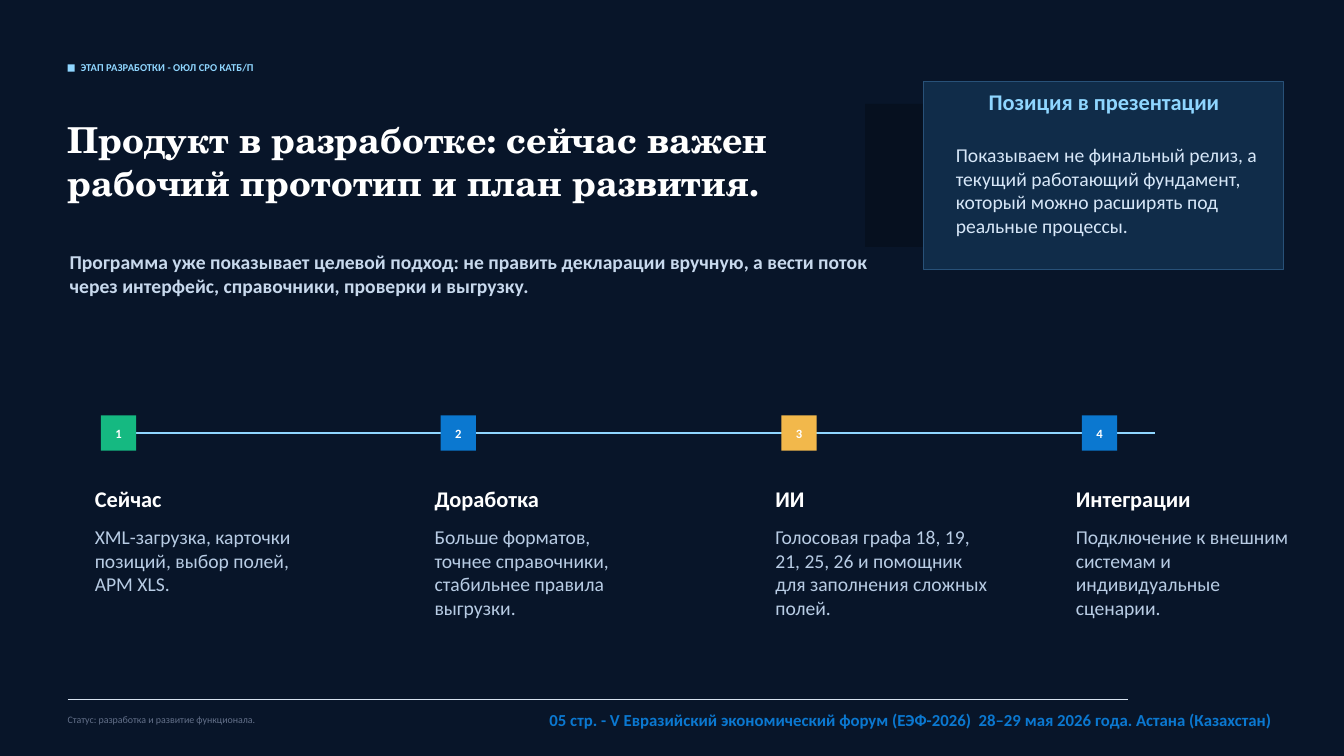
from pptx import Presentation
from pptx.dml.color import RGBColor
from pptx.enum.shapes import MSO_CONNECTOR as CONN, MSO_SHAPE as SHAPE
from pptx.enum.text import MSO_ANCHOR as ANCHOR, PP_ALIGN as ALIGN
from pptx.oxml.ns import qn
from pptx.util import Inches, Pt
from lxml import etree

SKY, BLUE, WHITE, MUTED = "8FD6FF", "0B78D0", "FFFFFF", "B8CCE4"
rgb = RGBColor.from_string

prs = Presentation()
prs.slide_width, prs.slide_height = Inches(13.33), Inches(7.5)
s = prs.slides.add_slide(prs.slide_layouts[6])
s.background.fill.solid()
s.background.fill.fore_color.rgb = rgb("081529")


def add_box(x, y, w, h, fill):
    sp = s.shapes.add_shape(SHAPE.RECTANGLE, Inches(x), Inches(y), Inches(w), Inches(h))
    sp.shadow.inherit = False
    sp.fill.solid()
    sp.fill.fore_color.rgb = rgb(fill)
    sp.line.fill.background()
    return sp


def add_text(text, x, y, w, h, size, color, bold=False, align=ALIGN.LEFT,
             font="Calibri", sp=None):
    """Write into the given shape, or into a new text box."""
    if sp is None:
        sp = s.shapes.add_textbox(Inches(x), Inches(y), Inches(w), Inches(h))
    tf = sp.text_frame
    tf.word_wrap = True
    tf.margin_left = tf.margin_top = tf.margin_right = tf.margin_bottom = 0
    tf.text = text
    p = tf.paragraphs[0]
    p.alignment = align
    r = p.runs[0]
    r.font.name, r.font.size, r.font.bold = font, Pt(size), bold
    r.font.color.rgb = rgb(color)


# Heading
add_box(0.67, 0.64, 0.07, 0.07, SKY)
add_text("ЭТАП РАЗРАБОТКИ - ОЮЛ СРО КАТБ/П", 0.8, 0.61, 3.75, 0.19, 7.5, SKY, True)
add_text("Продукт в разработке: сейчас важен рабочий прототип и план развития.",
         0.67, 1.17, 7.92, 1.08, 25.5, WHITE, True, font="TeX Gyre Schola")
add_text("Программа уже показывает целевой подход: не править декларации вручную, "
         "а вести поток через интерфейс, справочники, проверки и выгрузку.",
         0.69, 2.48, 7.92, 0.56, 14, "C8D9ED", True)

# Timeline axis and footer rule
for x1, x2, y, width, color in [(1.25, 11.46, 4.3, 1.5, SKY),
                                (0.67, 11.19, 6.94, 0.75, "D7E2EF")]:
    line = s.shapes.add_connector(CONN.STRAIGHT, Inches(x1), Inches(y), Inches(x2), Inches(y))
    line.line.width = Pt(width)
    line.line.color.rgb = rgb(color)
    etree.SubElement(line._element.spPr, qn("a:effectLst"))

# Timeline stages
stages = [
    (0.94, "15B981", "Сейчас", "XML-загрузка, карточки позиций, выбор полей, АРМ XLS."),
    (4.31, BLUE, "Доработка",
     "Больше форматов, точнее справочники, стабильнее правила выгрузки."),
    (7.69, "F2B84B", "ИИ",
     "Голосовая графа 18, 19, 21, 25, 26 и помощник для заполнения сложных полей."),
    (10.67, BLUE, "Интеграции",
     "Подключение к внешним системам и индивидуальные сценарии."),
]
for number, (x, color, name, details) in enumerate(stages, 1):
    marker = add_box(x + 0.06, 4.12, 0.35, 0.35, color)
    marker.text_frame.vertical_anchor = ANCHOR.MIDDLE
    add_text(str(number), 0, 0, 0, 0, 9, WHITE, True, ALIGN.CENTER, sp=marker)
    add_text(name, x, 4.81, 1.88, 0.25, 16, WHITE, True)
    add_text(details, x, 5.21, 2.14, 0.97, 14, MUTED)

# Position card
add_box(8.58, 1.03, 3.44, 1.42, "06101F")
card = add_box(9.16, 0.81, 3.57, 1.86, "102C49")
card.line.color.rgb = rgb("285178")
card.line.width = Pt(0.75)
add_text("Позиция в презентации", 9.25, 0.87, 3.4, 0.32, 16, SKY, True, ALIGN.CENTER)
add_text("Показываем не финальный релиз, а текущий работающий фундамент, "
         "который можно расширять под реальные процессы.",
         9.48, 1.42, 3.06, 0.85, 14, "D7E7F8")

# Footer
add_text("Статус: разработка и развитие функционала.", 0.67, 7.08, 4, 0.19, 7.1, "637089")
add_text("05 стр. - V Евразийский экономический форум (ЕЭФ-2026)  "
         "28–29 мая 2026 года. Астана (Казахстан)",
         4.86, 7.04, 7.76, 0.25, 12, BLUE, True, ALIGN.RIGHT)

prs.save("out.pptx")
